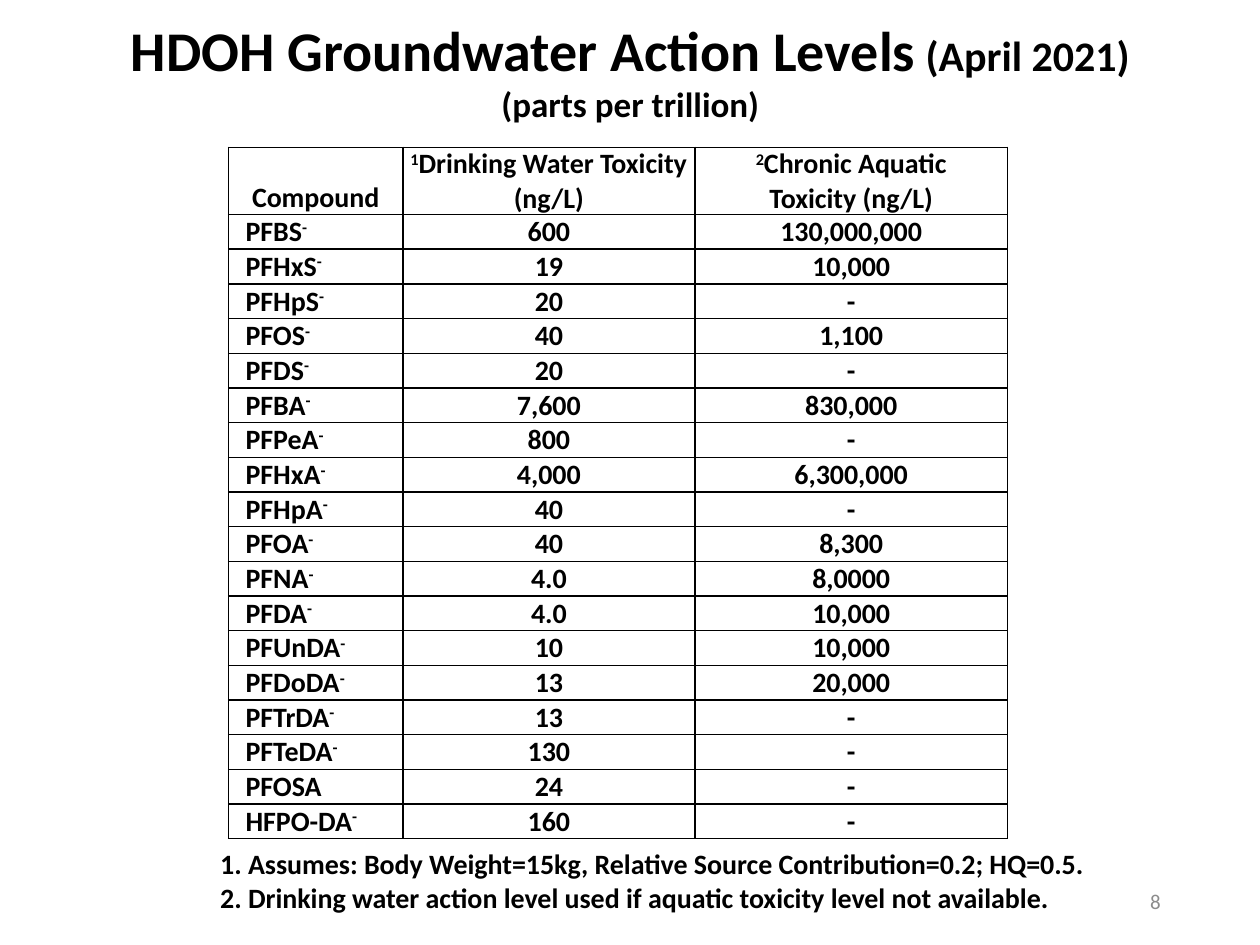
from lxml.etree import SubElement
from pptx import Presentation
from pptx.dml.color import RGBColor
from pptx.enum.text import MSO_ANCHOR, MSO_AUTO_SIZE, PP_ALIGN
from pptx.oxml.ns import qn
from pptx.util import Cm, Pt

COLORS = {"text": "000000", "border": "000000", "page_number": "8C8C8C"}
FONT = "Calibri"
BODY_SIZE = 16
COLUMN_WIDTHS = [3.51, 5.89, 6.3]
HEADER_HEIGHT = 1.35
ROW_HEIGHT = 0.7

HEADERS = [
    [[("Compound", False)]],
    [[("1", True), ("Drinking Water Toxicity (ng/L)", False)]],
    [[("2", True), ("Chronic Aquatic", False)], [("Toxicity (ng/L)", False)]],
]
ACTION_LEVELS = [
    ("PFBS", "-", "600", "130,000,000"),
    ("PFHxS", "-", "19", "10,000"),
    ("PFHpS", "-", "20", "-"),
    ("PFOS", "-", "40", "1,100"),
    ("PFDS", "-", "20", "-"),
    ("PFBA", "-", "7,600", "830,000"),
    ("PFPeA", "-", "800", "-"),
    ("PFHxA", "-", "4,000", "6,300,000"),
    ("PFHpA", "-", "40", "-"),
    ("PFOA", "-", "40", "8,300"),
    ("PFNA", "-", "4.0", "8,0000"),
    ("PFDA", "-", "4.0", "10,000"),
    ("PFUnDA", "-", "10", "10,000"),
    ("PFDoDA", "-", "13", "20,000"),
    ("PFTrDA", "-", "13", "-"),
    ("PFTeDA", "-", "130", "-"),
    ("PFOSA", "", "24", "-"),
    ("HFPO-DA", "-", "160", "-"),
]
NOTES = [
    "1. Assumes: Body Weight=15kg, Relative Source Contribution=0.2; HQ=0.5.",
    "2. Drinking water action level used if aquatic toxicity level not available.",
]


def add_styled_run(paragraph, text, size=BODY_SIZE, color="text", bold=True, superscript=False):
    run = paragraph.add_run()
    run.text = text
    run.font.name = FONT
    run.font.size = Pt(size)
    run.font.bold = bold
    run.font.color.rgb = RGBColor.from_string(COLORS[color])
    if superscript:
        run.font._element.set("baseline", "30000")


def fill_paragraphs(frame, lines, align=PP_ALIGN.LEFT):
    for index, runs in enumerate(lines):
        paragraph = frame.paragraphs[0] if index == 0 else frame.add_paragraph()
        paragraph.alignment = align
        for text, style in runs:
            add_styled_run(paragraph, text, **style)


def add_text(slide, left, top, width, height, lines, align=PP_ALIGN.LEFT,
             wrap=True, anchor=MSO_ANCHOR.TOP, grow=True):
    frame = slide.shapes.add_textbox(Cm(left), Cm(top), Cm(width), Cm(height)).text_frame
    frame.word_wrap = wrap
    frame.vertical_anchor = anchor
    frame.auto_size = MSO_AUTO_SIZE.SHAPE_TO_FIT_TEXT if grow else MSO_AUTO_SIZE.NONE
    fill_paragraphs(frame, lines, align)


def add_borders(cell):
    properties = cell._tc.get_or_add_tcPr()
    for side in ("a:lnL", "a:lnR", "a:lnT", "a:lnB"):
        border = SubElement(properties, qn(side), w=str(Pt(1)))
        solid = SubElement(border, qn("a:solidFill"))
        SubElement(solid, qn("a:srgbClr"), val=COLORS["border"])


def fill_cell(cell, lines, align=PP_ALIGN.CENTER, indent=0):
    add_borders(cell)
    cell.fill.background()
    cell.margin_left = cell.margin_right = cell.margin_top = cell.margin_bottom = 0
    cell.vertical_anchor = MSO_ANCHOR.BOTTOM
    styled = [[(text, {"superscript": raised}) for text, raised in line] for line in lines]
    fill_paragraphs(cell.text_frame, styled, align)
    if indent:
        cell.text_frame.paragraphs[0]._p.get_or_add_pPr().set("marL", str(Cm(indent)))


def add_levels_table(slide):
    height = HEADER_HEIGHT + ROW_HEIGHT * len(ACTION_LEVELS)
    table = slide.shapes.add_table(
        len(ACTION_LEVELS) + 1, len(HEADERS),
        Cm(4.61), Cm(2.97), Cm(sum(COLUMN_WIDTHS)), Cm(height)).table
    table.first_row = table.horz_banding = False
    for column, width in zip(table.columns, COLUMN_WIDTHS):
        column.width = Cm(width)
    for index, row in enumerate(table.rows):
        row.height = Cm(ROW_HEIGHT if index else HEADER_HEIGHT)
    for column, lines in enumerate(HEADERS):
        fill_cell(table.cell(0, column), lines)
    for row, (compound, charge, *levels) in enumerate(ACTION_LEVELS, start=1):
        name = [(compound, False)] + ([(charge, True)] if charge else [])
        fill_cell(table.cell(row, 0), [name], PP_ALIGN.LEFT, indent=0.34)
        for column, level in enumerate(levels, start=1):
            fill_cell(table.cell(row, column), [[(level, False)]])


def main():
    presentation = Presentation()
    presentation.slide_width, presentation.slide_height = Cm(25.4), Cm(19.05)
    slide = presentation.slides.add_slide(presentation.slide_layouts[6])
    title = [
        [("HDOH Groundwater Action Levels", {"size": 32}), (" (April 2021)", {"size": 24})],
        [("(parts per trillion)", {"size": 20})],
    ]
    add_text(slide, 2.08, 0.18, 21.26, 2.49, title, PP_ALIGN.CENTER, wrap=False)
    add_levels_table(slide)
    page_number = [[("8", {"size": 12, "color": "page_number", "bold": False})]]
    add_text(slide, 17.93, 17.65, 5.72, 1.02, page_number, PP_ALIGN.RIGHT,
             anchor=MSO_ANCHOR.MIDDLE, grow=False)
    add_text(slide, 4.19, 16.94, 18.62, 1.63, [[(note, {})] for note in NOTES])
    presentation.save("out.pptx")


if __name__ == "__main__":
    main()
